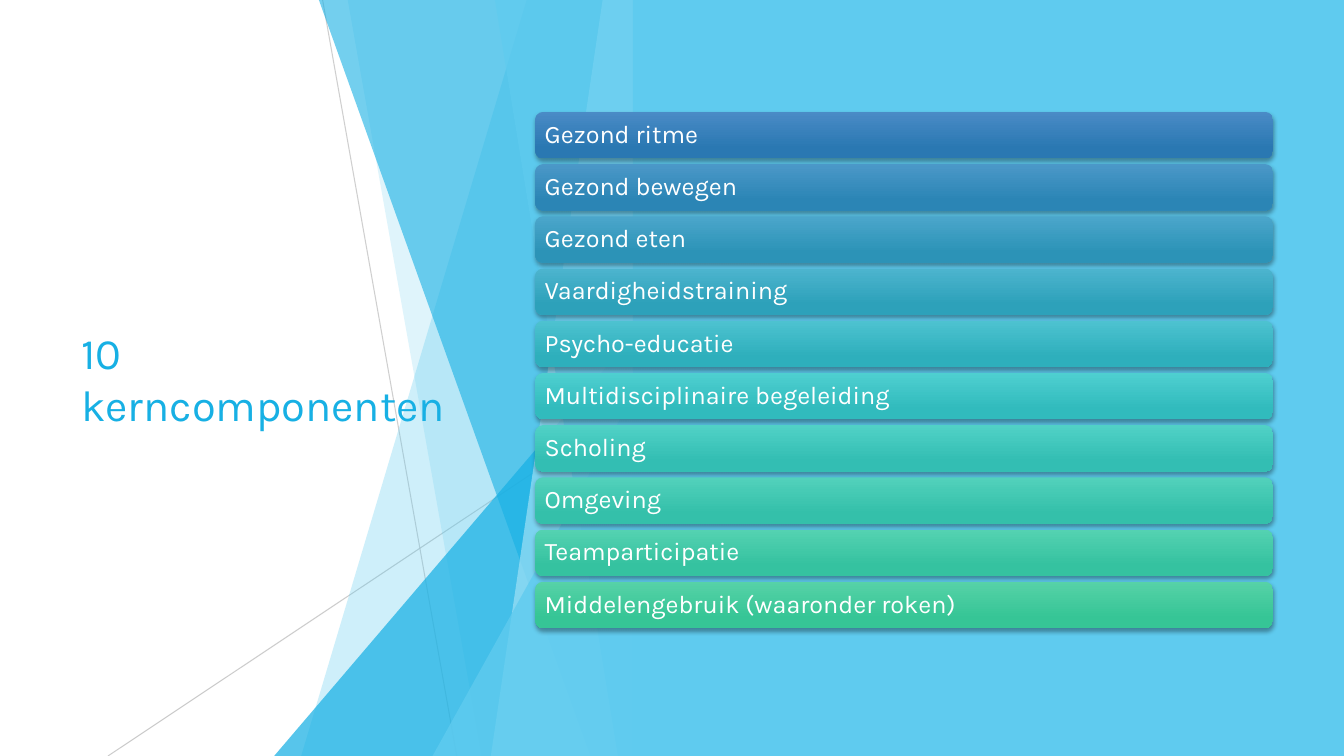
from lxml.etree import SubElement
from pptx import Presentation
from pptx.dml.color import RGBColor
from pptx.enum.shapes import MSO_CONNECTOR, MSO_SHAPE
from pptx.enum.text import MSO_ANCHOR, PP_ALIGN
from pptx.oxml.ns import qn
from pptx.util import Cm, Pt

TITLE = "10 kerncomponenten"
# component, top colour, bottom colour
COMPONENTS = [
    ("Gezond ritme", "4A8BC6", "2A78B2"),
    ("Gezond bewegen", "4B98C8", "2B85B5"),
    ("Gezond eten", "4BA6CB", "2C93B7"),
    ("Vaardigheidstraining", "4CB4CE", "2DA1BA"),
    ("Psycho-educatie", "4DC2D0", "2EAFBC"),
    ("Multidisciplinaire begeleiding", "4ECFD0", "31BBBD"),
    ("Scholing", "50D1C6", "33BEB3"),
    ("Omgeving", "52D1BB", "34C0AA"),
    ("Teamparticipatie", "54D2B1", "35C2A0"),
    ("Middelengebruik (waaronder roken)", "56D2A7", "36C596"),
]
COLOURS = {"white": "FFFFFF", "black": "000000", "grey": "BFBFBF",
           "sky": "5FCBEF", "blue": "17B0E4", "pale": "9FE0F5"}
FONT = "Karla"

# Lengths in cm
SLIDE_W, SLIDE_H = 33.87, 19.05
PANEL_X = 15.95
FACET_TOP = -0.02
RAYS = [((8.13, 0), (11.51, SLIDE_H), 75), ((PANEL_X, 10.24), (2.72, SLIDE_H), 80)]
# Back to front. Band: top x, bottom x. Wedge: left x, apex y. Then colour, opacity.
FACETS = [
    ("band", 13.28, 7.59, "sky", 30),
    ("band", 8.76, 12.14, "sky", 20),
    ("wedge", 6.91, 8.46, "blue", 72),
    ("band", 8.03, 14.88, "blue", 60),
    ("band", 15.19, 12.37, "pale", 70),
    ("band", 12.47, 15.57, "sky", 65),
    ("wedge", 10.90, 9.98, "sky", 80),
]
BAR_X, BAR_W, BAR_H = 13.49, 18.59, 1.17
FIRST_BAR_Y, LAST_BAR_Y = 2.82, 14.66

TITLE_FRAME = {"word_wrap": True, "vertical_anchor": MSO_ANCHOR.MIDDLE}
BAR_FRAME = {**TITLE_FRAME, **{f"margin_{side}": Cm(0.18)
                               for side in ("left", "right", "top", "bottom")}}


def rgb(name):
    return RGBColor.from_string(COLOURS[name])


def set_opacity(fill_owner, percent):
    """Add an alpha value to the solid colour of a shape fill or a line."""
    colour = next(fill_owner.iter(qn("a:srgbClr")))
    SubElement(colour, qn("a:alpha"), val=str(percent * 1000))


def paint(shape, colour, opacity=100):
    shape.shadow.inherit = False
    shape.line.fill.background()
    shape.fill.solid()
    shape.fill.fore_color.rgb = rgb(colour)
    if opacity < 100:
        set_opacity(shape._element.spPr, opacity)


def add_block(shapes, kind, x, y, w, h):
    return shapes.add_shape(kind, Cm(x), Cm(y), Cm(w), Cm(h))


def add_ray(shapes, start, end, opacity):
    ray = shapes.add_connector(MSO_CONNECTOR.STRAIGHT, *map(Cm, start + end))
    ray.line.width = Pt(0.75)
    ray.line.color.rgb = rgb("grey")
    set_opacity(ray._element.spPr, opacity)
    SubElement(ray._element.spPr, qn("a:effectLst"))


def add_band(shapes, top_x, bottom_x):
    """Draw a facet with one slanted side that ends at the panel edge."""
    corners = [(PANEL_X, FACET_TOP), (PANEL_X, SLIDE_H), (bottom_x, SLIDE_H)]
    builder = shapes.build_freeform(Cm(top_x), Cm(FACET_TOP))
    builder.add_line_segments([(Cm(x), Cm(y)) for x, y in corners], close=True)
    return builder.convert_to_shape()


def add_wedge(shapes, left, top):
    wedge = add_block(shapes, MSO_SHAPE.ISOSCELES_TRIANGLE,
                      left, top, PANEL_X - left, SLIDE_H - top)
    wedge.adjustments[0] = 1
    return wedge


def write(shape, text, size, colour, frame_format, line_spacing=1.0):
    frame = shape.text_frame
    for name, value in frame_format.items():
        setattr(frame, name, value)
    paragraph = frame.paragraphs[0]
    paragraph.alignment = PP_ALIGN.LEFT
    paragraph.line_spacing = line_spacing
    run = paragraph.add_run()
    run.text = text
    for name, value in {"name": FONT, "size": Pt(size)}.items():
        setattr(run.font, name, value)
    run.font.color.rgb = rgb(colour)


def add_drop_shadow(shape):
    shape.shadow.inherit = False
    effects = shape._element.spPr.find(qn("a:effectLst"))
    shadow = SubElement(effects, qn("a:outerShdw"), blurRad=str(Pt(3)),
                        dist=str(Pt(2)), dir="5400000", rotWithShape="0")
    SubElement(shadow, qn("a:srgbClr"), val=COLOURS["black"])
    set_opacity(shadow, 35)


def add_bar(shapes, y, text, top_colour, bottom_colour):
    bar = add_block(shapes, MSO_SHAPE.ROUNDED_RECTANGLE, BAR_X, y, BAR_W, BAR_H)
    bar.line.fill.background()
    bar.fill.gradient()
    bar.fill.gradient_angle = 270
    stops = zip(bar.fill.gradient_stops, (0, 0.78), (top_colour, bottom_colour))
    for stop, position, colour in stops:
        stop.position = position
        stop.color.rgb = RGBColor.from_string(colour)
    add_drop_shadow(bar)
    write(bar, text, 18, "white", BAR_FRAME, line_spacing=0.9)


def main():
    deck = Presentation()
    deck.slide_width, deck.slide_height = Cm(SLIDE_W), Cm(SLIDE_H)
    shapes = deck.slides.add_slide(deck.slide_layouts[6]).shapes

    paint(add_block(shapes, MSO_SHAPE.RECTANGLE, 0, 0, SLIDE_W, SLIDE_H), "white")
    for ray in RAYS:
        add_ray(shapes, *ray)
    draw = {"band": add_band, "wedge": add_wedge}
    for kind, first, second, colour, opacity in FACETS:
        paint(draw[kind](shapes, first, second), colour, opacity)

    title = shapes.add_textbox(Cm(1.8), Cm(3.84), Cm(9.86), Cm(11.38))
    write(title, TITLE, 31, "blue", TITLE_FRAME)

    panel = add_block(shapes, MSO_SHAPE.RECTANGLE,
                      PANEL_X, 0, SLIDE_W - PANEL_X, SLIDE_H)
    paint(panel, "sky")
    pitch = (LAST_BAR_Y - FIRST_BAR_Y) / (len(COMPONENTS) - 1)
    for row, component in enumerate(COMPONENTS):
        add_bar(shapes, FIRST_BAR_Y + row * pitch, *component)

    deck.save("out.pptx")


if __name__ == "__main__":
    main()
